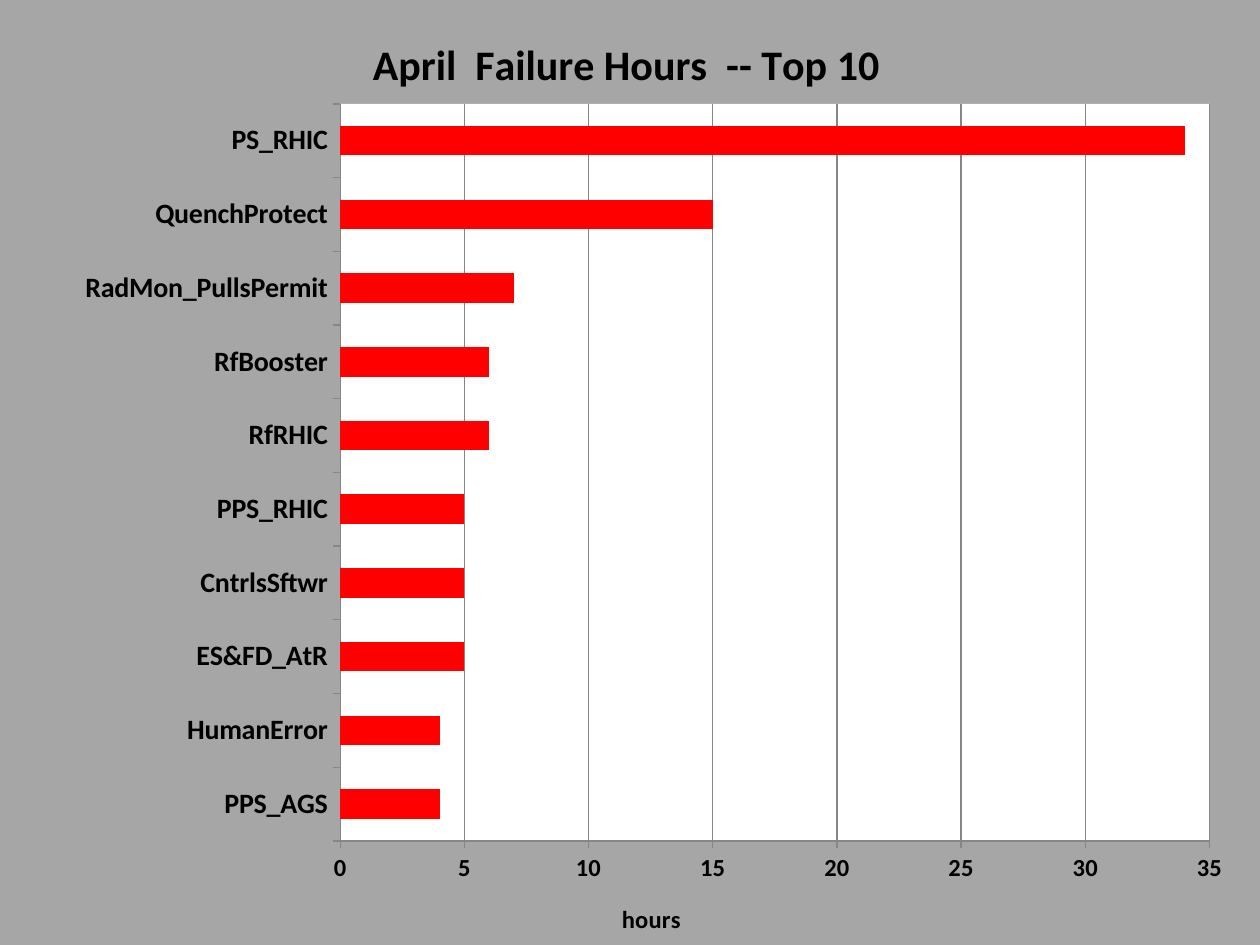
from lxml.etree import SubElement
from pptx import Presentation
from pptx.chart.data import CategoryChartData
from pptx.dml.color import RGBColor
from pptx.enum.chart import XL_CHART_TYPE, XL_TICK_MARK
from pptx.oxml import parse_xml
from pptx.oxml.ns import nsdecls, qn
from pptx.util import Inches, Pt

COLORS = {"background": "A6A6A6", "plot": "FFFFFF", "bar": "FF0000",
          "text": "000000", "line": "868686"}
FAILURE_HOURS = {
    "PPS_AGS": 4,
    "HumanError": 4,
    "ES&FD_AtR": 5,
    "CntrlsSftwr": 5,
    "PPS_RHIC": 5,
    "RfRHIC": 6,
    "RfBooster": 6,
    "RadMon_PullsPermit": 7,
    "QuenchProtect": 15,
    "PS_RHIC": 34,
}


class SlideBuilder:
    """Hold the style and the current slide, and add elements to it."""

    def __init__(self, presentation, font_name):
        self.font_name = font_name
        self.slide = presentation.slides.add_slide(presentation.slide_layouts[6])

    def style_font(self, font, size, bold=True):
        font.name = self.font_name
        font.size = Pt(size)
        font.bold = bold
        font.color.rgb = RGBColor.from_string(COLORS["text"])

    def style_line(self, line):
        line.color.rgb = RGBColor.from_string(COLORS["line"])
        line.width = Pt(0.75)

    def area_fill(self, color):
        return parse_xml(
            f'<c:spPr {nsdecls("c", "a")}><a:solidFill><a:srgbClr val="{COLORS[color]}"/>'
            "</a:solidFill><a:ln><a:noFill/></a:ln></c:spPr>")

    def place(self, element, **settings):
        for old_layout in element.findall(qn("c:layout")):
            element.remove(old_layout)
        layout = parse_xml(f'<c:layout {nsdecls("c")}/>')
        manual = SubElement(layout, qn("c:manualLayout"))
        for name, value in settings.items():
            SubElement(manual, qn(f"c:{name}")).set("val", str(value))
        text = element.find(qn("c:tx"))
        if text is None:
            element.insert(0, layout)
        else:
            text.addnext(layout)

    def add_title(self, owner, text, size, x, y):
        title = owner.chart_title if hasattr(owner, "chart_title") else owner.axis_title
        run = title.text_frame.paragraphs[0].add_run()
        run.text = text
        self.style_font(run.font, size)
        self.place(title._element, xMode="edge", yMode="edge", x=x, y=y)

    def style_axis(self, axis, size):
        axis.major_tick_mark = XL_TICK_MARK.OUTSIDE
        axis.minor_tick_mark = XL_TICK_MARK.NONE
        self.style_font(axis.tick_labels.font, size)
        self.style_line(axis.format.line)

    def add_bar_chart(self, values, left, top, width, height):
        data = CategoryChartData()
        data.categories = list(values)
        data.add_series("Series 1", list(values.values()))
        chart = self.slide.shapes.add_chart(
            XL_CHART_TYPE.BAR_CLUSTERED, Inches(left), Inches(top),
            Inches(width), Inches(height), data).chart
        chart.has_legend = False
        self.style_font(chart.font, 10, bold=False)
        plot = chart.plots[0]
        plot.gap_width = 150
        plot.vary_by_categories = False
        fill = plot.series[0].format.fill
        fill.solid()
        fill.fore_color.rgb = RGBColor.from_string(COLORS["bar"])

        self.style_axis(chart.category_axis, 16)
        value_axis = chart.value_axis
        self.style_axis(value_axis, 14)
        value_axis.minimum_scale = 0
        value_axis.maximum_scale = 35
        value_axis.major_unit = 5
        value_axis.has_major_gridlines = True
        self.style_line(value_axis.major_gridlines.format.line)
        value_axis.tick_labels.number_format = "0"
        value_axis.tick_labels.number_format_is_linked = False

        chart_element = chart._chartSpace.find(qn("c:chart"))
        chart_element.addnext(self.area_fill("background"))
        plot_area = chart_element.find(qn("c:plotArea"))
        plot_area.append(self.area_fill("plot"))
        self.place(plot_area, layoutTarget="inner", xMode="edge", yMode="edge",
                   x=0.27, y=0.11, w=0.69, h=0.78)
        return chart


def main():
    presentation = Presentation()
    presentation.slide_width = Inches(10)
    presentation.slide_height = Inches(7.5)
    builder = SlideBuilder(presentation, "Calibri")
    chart = builder.add_bar_chart(FAILURE_HOURS, 0, 0, 10, 7.5)
    builder.add_title(chart, "April  Failure Hours  -- Top 10", 24, 0.29, 0.03)
    builder.add_title(chart.value_axis, "hours", 14, 0.49, 0.95)
    presentation.save("out.pptx")


if __name__ == "__main__":
    main()
